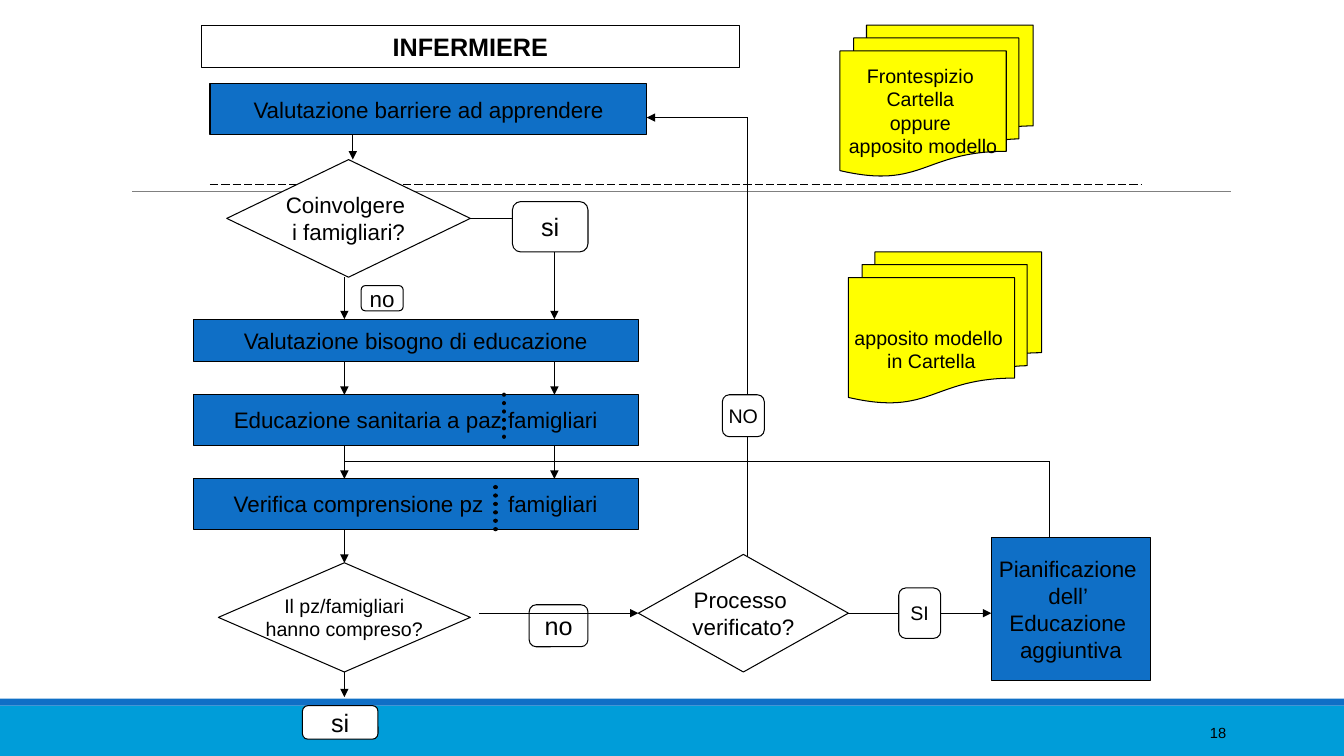
from lxml.etree import SubElement
from pptx import Presentation
from pptx.dml.color import RGBColor
from pptx.enum.dml import MSO_LINE
from pptx.enum.shapes import MSO_CONNECTOR, MSO_SHAPE
from pptx.enum.text import MSO_ANCHOR, MSO_AUTO_SIZE, PP_ALIGN
from pptx.oxml.ns import qn
from pptx.util import Pt

COLORS = {"black": "000000", "white": "FFFFFF", "blue": "0F6FC6",
          "cyan": "009DD9", "yellow": "FFFF00", "gray": "808080"}
FONT = "Arial"
TOP, LEFT, BOTTOM, RIGHT = 0, 1, 2, 3
PATIENT_X, FAMILY_X, RETURN_X, PLAN_X = 246, 396, 534, 750

# Content: name, kind, fill, (left, top, width, height), text size, text
STEP, CHOICE = MSO_SHAPE.FLOWCHART_PROCESS, MSO_SHAPE.FLOWCHART_DECISION
DIAMOND, PAPERS = MSO_SHAPE.DIAMOND, MSO_SHAPE.FLOWCHART_MULTIDOCUMENT
CHIP = MSO_SHAPE.ROUNDED_RECTANGLE
NODES = [
    ("barriers", STEP, "blue", (150, 60, 312, 36), 16, "Valutazione barriere ad apprendere"),
    ("cover", PAPERS, "yellow", (600, 18, 138, 108), 14,
     "Frontespizio \nCartella \noppure \napposito modello"),
    ("form", PAPERS, "yellow", (606, 180, 138, 108), 14, "apposito modello \nin Cartella"),
    ("family", DIAMOND, "white", (162, 114, 174, 84), 16, "Coinvolgere \ni famigliari?"),
    ("need", STEP, "blue", (138, 228, 318, 30), 16, "Valutazione bisogno di educazione"),
    ("education", STEP, "blue", (138, 282, 318, 36), 16, "Educazione sanitaria a paz famigliari"),
    ("check", STEP, "blue", (138, 342, 318, 36), 16, "Verifica comprensione pz\tfamigliari"),
    ("understood", CHOICE, "white", (156, 402, 180, 78), 14, "Il pz/famigliari\nhanno compreso?"),
    ("not understood", CHIP, "white", (378, 432, 42, 30), 18, "no"),
    ("process", DIAMOND, "white", (456, 396, 150, 84), 16, "Processo \nverificato?"),
    ("plan", STEP, "blue", (708, 384, 114, 102), 16,
     "Pianificazione \ndell’ \nEducazione \naggiuntiva"),
]
CHIPS = [
    ("family yes", CHIP, "white", (366, 144, 54, 36), 18, "si"),
    ("family no", CHIP, "white", (258, 204, 30, 18), 16, "no"),
    ("process no", CHIP, "white", (516, 282, 30, 30), 14, "NO"),
    ("process yes", CHIP, "white", (642, 420, 30, 36), 14, "SI"),
    ("understood yes", CHIP, "white", (216, 504, 54, 24), 18, "si"),
]

# Lines: start, end (a point, or a node name with its side), arrowhead
LINKS = [
    ((252, 96), (252, 114), True),
    ((PATIENT_X, 198), (PATIENT_X, 228), True),
    (("family", RIGHT), (366, 156), False),
    ((FAMILY_X, 180), (FAMILY_X, 228), True),
    *[((x, top), (x, bottom), True)
      for x in (PATIENT_X, FAMILY_X) for top, bottom in ((258, 282), (318, 342))],
    ((PATIENT_X, 378), ("understood", TOP), True),
    (("understood", BOTTOM), (PATIENT_X, 498), True),
    ((342, 438), ("process", LEFT), True),
    (("process", RIGHT), (708, 438), True),
    ((RETURN_X, 84), (462, 84), True),
    ((PLAN_X, 384), (PLAN_X, 330), False),
    ((PLAN_X, 330), (PATIENT_X, 330), False),
]
DIVIDERS = [((360, 312), (360, 276)), ((354, 378), (354, 342))]

deck = Presentation()
deck.slide_width, deck.slide_height = Pt(960), Pt(540)
page = deck.slides.add_slide(deck.slide_layouts[5])
nodes = {}


def rgb(name):
    return RGBColor.from_string(COLORS[name])


def write(shape, text, size, align=PP_ALIGN.CENTER, bold=False, wrap=False):
    frame = shape.text_frame
    frame.text = text
    frame.word_wrap = wrap
    frame.auto_size = MSO_AUTO_SIZE.NONE
    frame.vertical_anchor = MSO_ANCHOR.MIDDLE
    for para in frame.paragraphs:
        para.alignment = align
        font = para.font
        font.name, font.size, font.bold = FONT, Pt(size), bold
        font.color.rgb = rgb("black")


def paint(shape, fill, outlined=True):
    shape.fill.solid()
    shape.fill.fore_color.rgb = rgb(fill)
    if outlined:
        shape.line.color.rgb = rgb("black")
        shape.line.width = Pt(0.75)
    else:
        shape.line.fill.background()


def add_box(kind, fill, place, outlined=True):
    box = page.shapes.add_shape(kind, *map(Pt, place))
    box.shadow.inherit = False
    paint(box, fill, outlined)
    return box


def add_node(name, kind, fill, place, size, text):
    box = nodes[name] = add_box(kind, fill, place)
    if "\t" in text:
        # Left text with a tab stop leaves room for the dotted divider
        box.text_frame.margin_left = Pt(29)
        box.text_frame.text = text
        write(box, text, size, PP_ALIGN.LEFT, wrap=True)
        props = box.text_frame.paragraphs[0].font._element.getparent()
        tabs = props.makeelement(qn("a:tabLst"))
        props.insert(0, tabs)
        SubElement(tabs, qn("a:tab"), pos=str(Pt(196)), algn="l")
    else:
        write(box, text, size)


def add_line(start, end, arrow=False, color="black", width=0.75, dash=None):
    glued = [isinstance(spot[0], str) for spot in (start, end)]
    points = [(0, 0) if joined else spot for joined, spot in zip(glued, (start, end))]
    line = page.shapes.add_connector(
        MSO_CONNECTOR.STRAIGHT, *[Pt(value) for point in points for value in point])
    if glued[0]:
        line.begin_connect(nodes[start[0]], start[1])
    if glued[1]:
        line.end_connect(nodes[end[0]], end[1])
    line.line.color.rgb = rgb(color)
    line.line.width = Pt(width)
    if dash:
        line.line.dash_style = dash
    props = line._element.spPr
    outline = props.find(qn("a:ln"))
    if dash == MSO_LINE.ROUND_DOT:
        outline.set("cap", "rnd")
    if arrow:
        SubElement(outline, qn("a:tailEnd"), type="triangle")
    SubElement(props, qn("a:effectLst"))


# Bottom bands, rules and the return line, behind everything else
add_box(MSO_SHAPE.RECTANGLE, "cyan", (0, 504, 960, 36), outlined=False)
add_box(MSO_SHAPE.RECTANGLE, "blue", (0, 499, 960, 5), outlined=False)
add_line((94.5, 136.8), (879, 136.8), color="gray", width=0.5)
add_line((150, 132), (816, 132), dash=MSO_LINE.LONG_DASH)
add_line((RETURN_X, 414), (RETURN_X, 84))

# Title and page number
title = page.shapes.title
title.left, title.top, title.width, title.height = map(Pt, (144, 18, 384, 30))
paint(title, "white")
write(title, "INFERMIERE", 18, bold=True)
number = page.shapes.add_textbox(*map(Pt, (780, 508.5, 103, 29)))
write(number, "18", 10.5, PP_ALIGN.RIGHT, wrap=True)

# Flow chart: nodes, then links, then the answers on top
for node in NODES:
    add_node(*node)
nodes["form"].text_frame.margin_top = Pt(20)
for link in LINKS:
    add_line(*link)
for start, end in DIVIDERS:
    add_line(start, end, width=3, dash=MSO_LINE.ROUND_DOT)
for chip in CHIPS:
    add_node(*chip)

deck.save("out.pptx")
